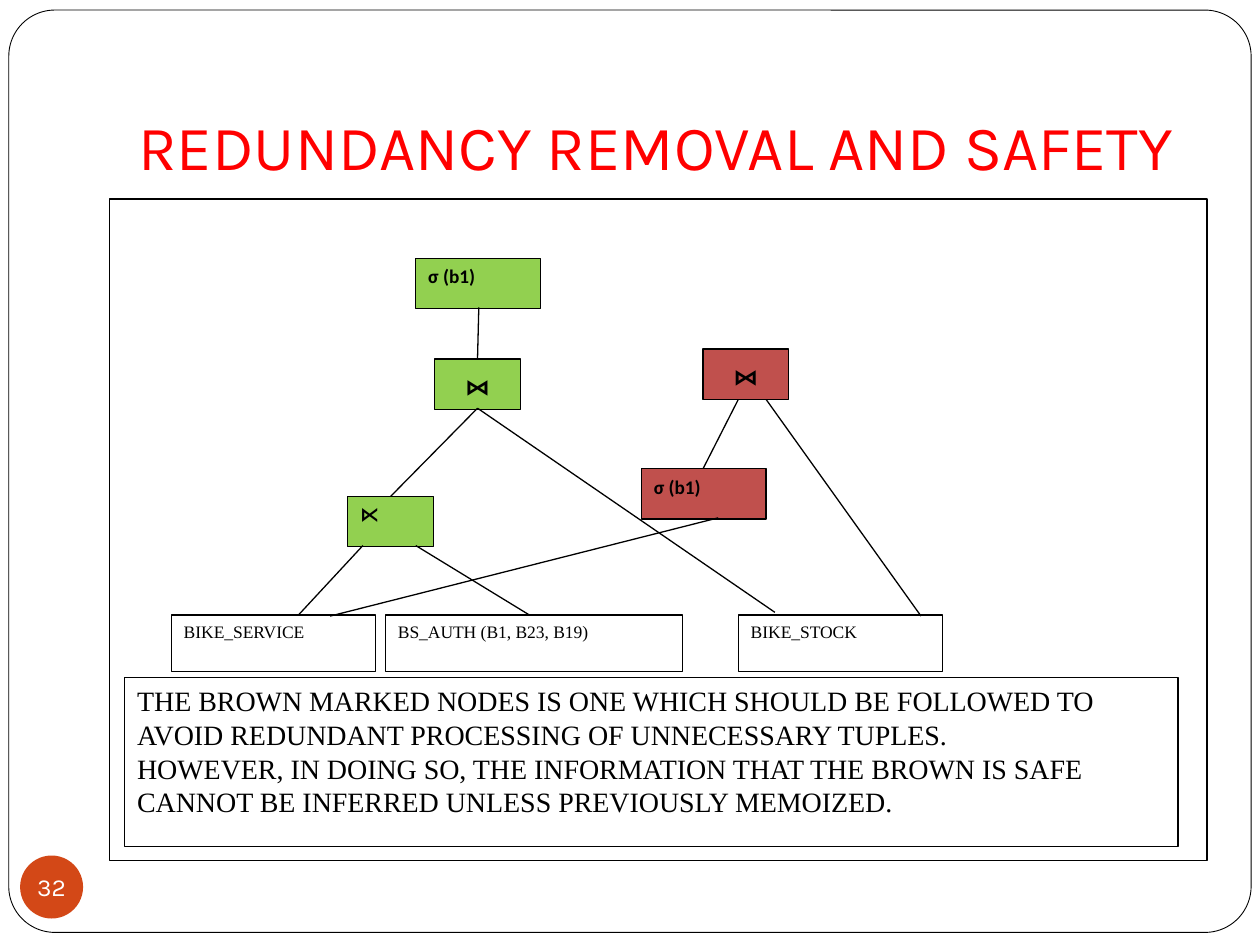
from pptx import Presentation
from pptx.dml.color import RGBColor
from pptx.enum import shapes, text
from pptx.oxml.ns import qn
from pptx.util import Inches, Pt
from lxml import etree

GREEN, BROWN, WHITE, BLACK = "92D050", "C0504D", "FFFFFF", "000000"
SERIF = "Times New Roman"


def rgb(value):
    return RGBColor.from_string(value)


def add_box(s, x, y, w, h, fill=None, line=BLACK, width=0.75,
            kind=shapes.MSO_SHAPE.RECTANGLE):
    sp = s.shapes.add_shape(kind, Inches(x), Inches(y), Inches(w), Inches(h))
    sp.shadow.inherit = False
    if fill:
        sp.fill.solid()
        sp.fill.fore_color.rgb = rgb(fill)
    else:
        sp.fill.background()
    if line:
        sp.line.color.rgb = rgb(line)
        sp.line.width = Pt(width)
    else:
        sp.line.fill.background()
    return sp


def write(sp, content, size, font=SERIF, color=BLACK, bold=False,
          align=text.PP_ALIGN.LEFT, anchor=text.MSO_ANCHOR.TOP):
    tf = sp.text_frame
    tf.text = content
    tf.word_wrap = True
    tf.vertical_anchor = anchor
    for p in tf.paragraphs:
        p.alignment = align
        for r in p.runs:
            r.font.size, r.font.name, r.font.bold = Pt(size), font, bold
            r.font.color.rgb = rgb(color)
    return tf


def add_line(s, x1, y1, x2, y2):
    c = s.shapes.add_connector(shapes.MSO_CONNECTOR.STRAIGHT, Inches(x1),
                               Inches(y1), Inches(x2), Inches(y2))
    c.line.color.rgb = rgb(BLACK)
    c.line.width = Pt(0.75)
    etree.SubElement(c._element.spPr, qn("a:effectLst"))


def add_frame(s, x, y, w, h):
    sp = add_box(s, x, y, w, h, WHITE, width=0.5,
                 kind=shapes.MSO_SHAPE.ROUNDED_RECTANGLE)
    sp.adjustments[0] = 0.05


def add_title(s, x, y, w, h):
    sp = s.shapes.add_textbox(Inches(x), Inches(y), Inches(w), Inches(h))
    tf = write(sp, "REDUNDANCY REMOVAL AND SAFETY", 36, "Karla", "FF0000",
               anchor=text.MSO_ANCHOR.BOTTOM)
    tf.margin_bottom = Inches(0.1)


def add_page_number(s, x, y, size):
    sp = add_box(s, x, y, size, size, "D34817", None,
                 kind=shapes.MSO_SHAPE.OVAL)
    tf = write(sp, "32", 14, "Karla", WHITE, align=text.PP_ALIGN.CENTER,
               anchor=text.MSO_ANCHOR.MIDDLE)
    tf.word_wrap = False
    tf.margin_left = tf.margin_right = tf.margin_top = tf.margin_bottom = 0


def add_query_plan(s, x, y, w, h):
    add_box(s, x, y, w, h)

    relations = [("BIKE_SERVICE", 0.49, 1.62),
                 ("BS_AUTH (B1, B23, B19)", 2.19, 2.36),
                 ("BIKE_STOCK", 4.99, 1.62)]
    for name, dx, width in relations:
        write(add_box(s, x + dx, y + 3.3, width, 0.45, WHITE), name, 10)

    selections = [(2.43, 0.47, GREEN), (4.22, 2.14, BROWN)]
    for dx, dy, fill in selections:
        write(add_box(s, x + dx, y + dy, 0.99, 0.4, fill),
              "σ (b1)", 11, "Calibri", bold=True)

    joins = [(2.58, 1.27, GREEN), (4.71, 1.19, BROWN)]
    for dx, dy, fill in joins:
        write(add_box(s, x + dx, y + dy, 0.68, 0.4, fill),
              "⋈", 18, bold=True, align=text.PP_ALIGN.CENTER)

    write(add_box(s, x + 1.89, y + 2.36, 0.68, 0.4, GREEN),
          "⋉", 11, "Calibri", bold=True)

    edges = [
        (2.92, 1.27, 2.93, 0.86),  # green join to selection
        (2.23, 2.36, 2.92, 1.66),  # semijoin to green join
        (5.28, 3.28, 2.92, 1.66),  # stock to green join
        (1.50, 3.30, 2.01, 2.75),  # service to semijoin
        (3.33, 3.30, 2.43, 2.75),  # auth to semijoin
        (1.75, 3.31, 4.83, 2.53),  # service to brown selection
        (4.71, 2.14, 4.99, 1.59),  # brown selection to join
        (6.44, 3.31, 5.21, 1.59),  # stock to brown join
    ]
    for x1, y1, x2, y2 in edges:
        add_line(s, x + x1, y + y1, x + x2, y + y2)

    write(add_box(s, x + 0.12, y + 3.8, 8.36, 1.34, WHITE),
          "THE BROWN MARKED NODES IS ONE WHICH SHOULD BE FOLLOWED TO AVOID "
          "REDUNDANT PROCESSING OF UNNECESSARY TUPLES.\n"
          "HOWEVER, IN DOING SO, THE INFORMATION THAT THE BROWN IS SAFE "
          "CANNOT BE INFERRED UNLESS PREVIOUSLY MEMOIZED.", 16)


def main():
    prs = Presentation()
    prs.slide_width, prs.slide_height = Inches(10), Inches(7.5)
    s = prs.slides.add_slide(prs.slide_layouts[6])
    add_frame(s, 0.07, 0.08, 9.86, 7.32)
    add_title(s, 1, 0.3, 8.5, 1.25)
    add_page_number(s, 0.16, 6.79, 0.5)
    add_query_plan(s, 0.87, 1.58, 8.71, 5.25)
    prs.save("out.pptx")


if __name__ == "__main__":
    main()
